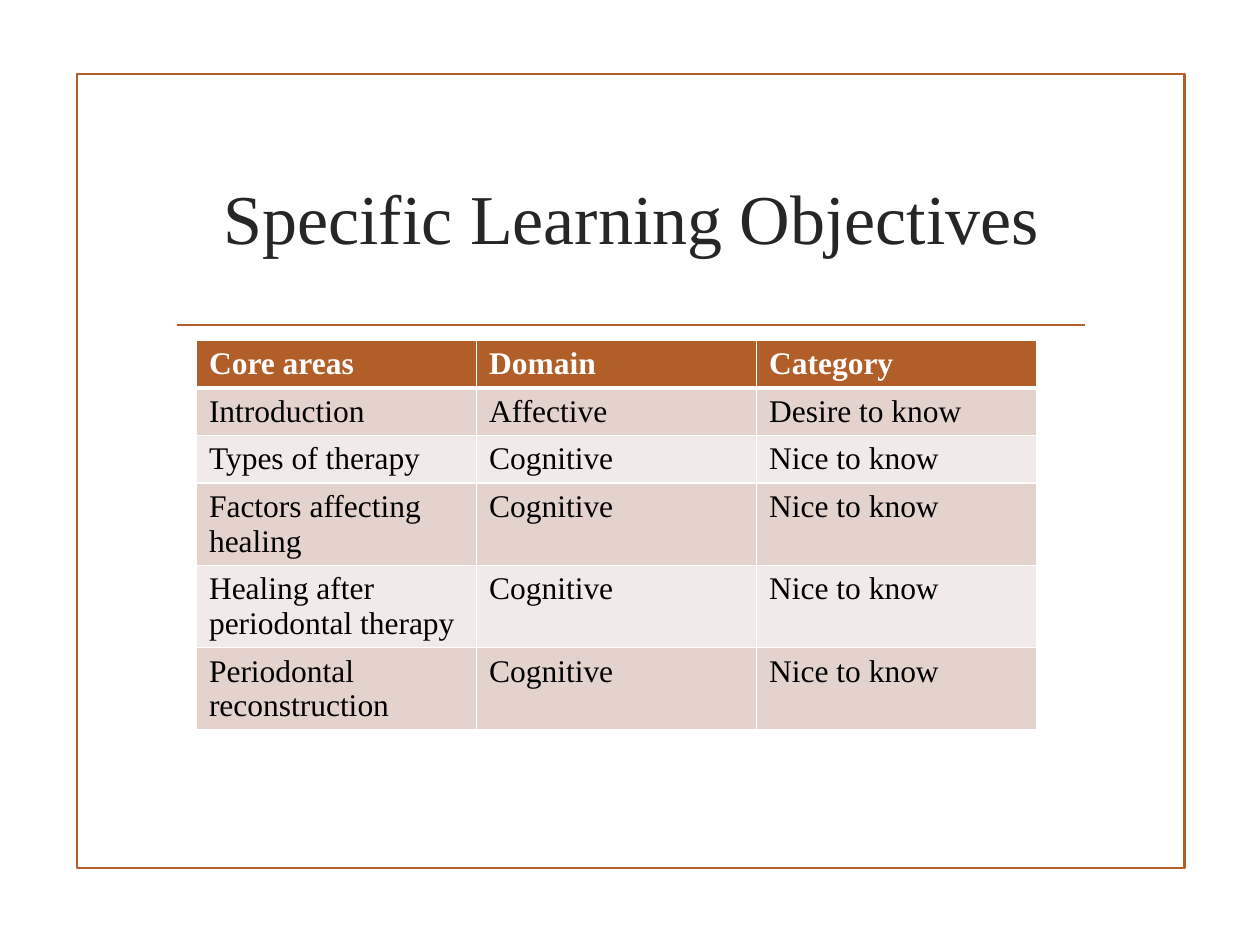
from lxml import etree
from pptx import Presentation, util as u
from pptx.dml.color import RGBColor
from pptx.enum import shapes, text
from pptx.oxml import ns

RUST = RGBColor(0xB1, 0x5E, 0x28)
INK = RGBColor(0x26, 0x26, 0x26)
BLACK = RGBColor(0, 0, 0)
WHITE = RGBColor(0xFF, 0xFF, 0xFF)
ROSE = RGBColor(0xE4, 0xD2, 0xCD)
PALE = RGBColor(0xF2, 0xEA, 0xE8)

ROWS = [
    ("Core areas", "Domain", "Category"),
    ("Introduction", "Affective", "Desire to know"),
    ("Types of therapy", "Cognitive", "Nice to know"),
    ("Factors affecting healing", "Cognitive", "Nice to know"),
    ("Healing after periodontal therapy", "Cognitive", "Nice to know"),
    ("Periodontal reconstruction", "Cognitive", "Nice to know"),
]
HEIGHTS = [0.95, 0.95, 0.95, 1.65, 1.65, 1.65]


class Deck:
    face = "Times New Roman"
    stroke = u.Pt(1.25)

    def __init__(self, slide):
        self.slide = slide

    def style(self, par, size, color, bold=False):
        font = par.font
        font.name, font.size, font.bold = self.face, u.Pt(size), bold
        font.color.rgb = color

    def title(self, words, *box):
        head = self.slide.shapes.title
        head.left, head.top, head.width, head.height = map(u.Cm, box)
        frame = head.text_frame
        frame.text = words
        frame.word_wrap = True
        frame.vertical_anchor = text.MSO_ANCHOR.MIDDLE
        par = frame.paragraphs[0]
        par.alignment = text.PP_ALIGN.CENTER
        self.style(par, 40, INK)

    def frame(self, *box):
        rect = self.slide.shapes.add_shape(
            shapes.MSO_SHAPE.RECTANGLE, *map(u.Cm, box))
        rect.shadow.inherit = False
        rect.fill.background()
        rect.line.color.rgb = RUST
        rect.line.width = self.stroke

    def rule(self, left, right, top):
        line = self.slide.shapes.add_connector(
            shapes.MSO_CONNECTOR.STRAIGHT,
            u.Cm(left), u.Cm(top), u.Cm(right), u.Cm(top))
        line.line.color.rgb = RUST
        line.line.width = self.stroke
        etree.SubElement(line._element.spPr, ns.qn("a:effectLst"))

    def border(self, cell, side, width):
        props = cell._tc.get_or_add_tcPr()
        edge = etree.SubElement(props, ns.qn(f"a:ln{side}"), w=str(u.Pt(width)))
        fill = etree.SubElement(edge, ns.qn("a:solidFill"))
        etree.SubElement(fill, ns.qn("a:srgbClr"), val=str(WHITE))

    def cell(self, cell, words, row):
        for side in "LRTB":
            thick = (row == 0 and side == "B") or (row == 1 and side == "T")
            self.border(cell, side, 3 if thick else 1)
        cell.fill.solid()
        cell.fill.fore_color.rgb = RUST if row == 0 else ROSE if row % 2 else PALE
        cell.text = words
        self.style(cell.text_frame.paragraphs[0], 18,
                   BLACK if row else WHITE, bold=row == 0)

    def table(self, rows, heights, left, top, width):
        grid = self.slide.shapes.add_table(
            len(rows), len(rows[0]), u.Cm(left), u.Cm(top),
            u.Cm(width), u.Cm(sum(heights))).table
        for r, (words, height) in enumerate(zip(rows, heights)):
            grid.rows[r].height = u.Cm(height)
            for c, word in enumerate(words):
                self.cell(grid.cell(r, c), word, r)


def main():
    prs = Presentation()
    prs.slide_width, prs.slide_height = u.Cm(25.4), u.Cm(19.05)
    deck = Deck(prs.slides.add_slide(prs.slide_layouts[5]))

    # Border and divider
    deck.frame(1.55, 1.5, 22.33, 16)
    deck.rule(3.56, 21.87, 6.55)

    # Heading
    deck.title("Specific Learning Objectives", 3.28, 2.54, 18.9, 3.63)

    # Objectives
    deck.table(ROWS, HEIGHTS, 3.96, 6.86, 16.94)

    prs.save("out.pptx")


if __name__ == "__main__":
    main()
